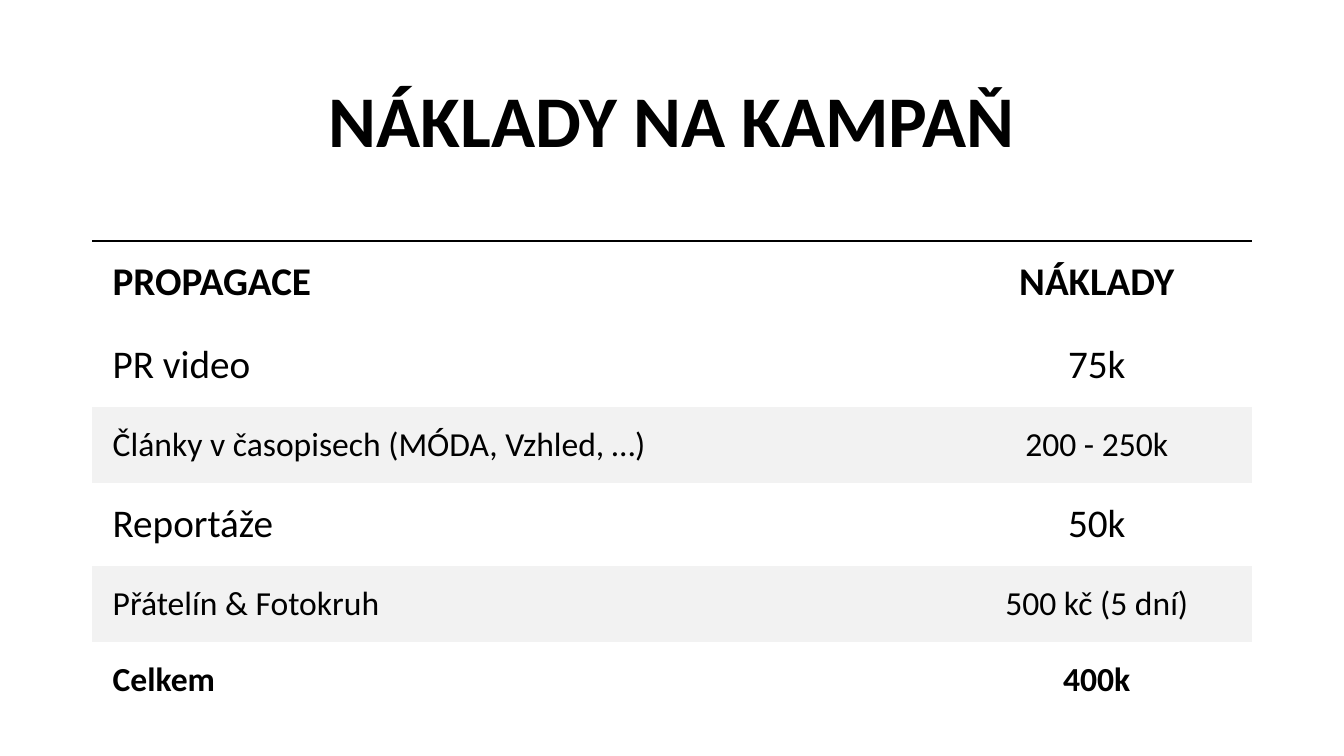
from dataclasses import dataclass

from lxml.etree import SubElement
from pptx import Presentation
from pptx.dml.color import RGBColor
from pptx.enum.text import MSO_ANCHOR as Anchor, PP_ALIGN as Align
from pptx.oxml import parse_xml
from pptx.oxml.ns import nsdecls, qn
from pptx.util import Cm, Pt

TITLE = "NÁKLADY NA KAMPAŇ"
# label, cost, large type, bold, shaded
ROWS = [
    ("PROPAGACE", "NÁKLADY", True, True, False),
    ("PR video", "75k", True, False, False),
    ("Články v časopisech (MÓDA, Vzhled, …)", "200 - 250k", False, False, True),
    ("Reportáže", "50k", True, False, False),
    ("Přátelín & Fotokruh", "500 kč (5 dní)", False, False, True),
    ("Celkem", "400k", False, True, False),
]
COLUMN_WIDTHS = (21.41, 7.8)
LARGE_ROW, SMALL_ROW = 2.09, 1.92
LEFT, TABLE_TOP = 2.33, 6.07
PLAIN_TABLE_STYLE = "{2D5ABB26-0587-4C30-8999-92F81FD0307C}"


@dataclass(frozen=True)
class Theme:
    font: str = "Calibri"
    ink: str = "000000"
    band: str = "F2F2F2"
    title: float = 52
    large: float = 28
    small: float = 24
    rule: float = 2.25


THEME = Theme()


def format_text(para, size, bold, align):
    para.alignment = align
    for span in para.runs:
        span.font.name = THEME.font
        span.font.size = Pt(size)
        span.font.bold = bold
        span.font.color.rgb = RGBColor.from_string(THEME.ink)


def add_title(page):
    box = page.shapes.title
    box.left, box.top, box.width, box.height = Cm(LEFT), Cm(1.55), Cm(sum(COLUMN_WIDTHS)), Cm(3.15)
    frame = box.text_frame
    frame.text = TITLE
    frame.vertical_anchor = Anchor.MIDDLE
    para = frame.paragraphs[0]
    para.line_spacing = 0.9
    format_text(para, THEME.title, True, Align.CENTER)


def add_top_rule(cell):
    rule = parse_xml(
        f'<a:lnT {nsdecls("a")} w="{Pt(THEME.rule)}"><a:solidFill>'
        f'<a:srgbClr val="{THEME.ink}"/></a:solidFill></a:lnT>'
    )
    cell._tc.get_or_add_tcPr().insert(0, rule)


def fill_cell(cell, text, size, bold, shaded, align):
    cell.text = text
    cell.vertical_anchor = Anchor.MIDDLE
    cell.margin_left = cell.margin_right = Cm(0.51)
    cell.margin_top = cell.margin_bottom = Cm(0.36)
    if shaded:
        cell.fill.solid()
        cell.fill.fore_color.rgb = RGBColor.from_string(THEME.band)
    else:
        cell.fill.background()
    format_text(cell.text_frame.paragraphs[0], size, bold, align)


def add_cost_table(page):
    heights = [LARGE_ROW if large else SMALL_ROW for _, _, large, _, _ in ROWS]
    frame = page.shapes.add_table(
        len(ROWS), len(COLUMN_WIDTHS), Cm(LEFT), Cm(TABLE_TOP),
        Cm(sum(COLUMN_WIDTHS)), Cm(sum(heights)),
    )
    table = frame.table
    table.first_row = table.horz_banding = False
    properties = table._tbl.tblPr
    for style in properties.findall(qn("a:tableStyleId")):
        properties.remove(style)
    SubElement(properties, qn("a:tableStyleId")).text = PLAIN_TABLE_STYLE

    for column, width in zip(table.columns, COLUMN_WIDTHS):
        column.width = Cm(width)
    for row, height, (label, cost, large, bold, shaded) in zip(table.rows, heights, ROWS):
        row.height = Cm(height)
        size = THEME.large if large else THEME.small
        for cell, text, align in zip(row.cells, (label, cost), (Align.LEFT, Align.CENTER)):
            fill_cell(cell, text, size, bold, shaded, align)
    for cell in table.rows[0].cells:
        add_top_rule(cell)


def main():
    deck = Presentation()
    deck.slide_width, deck.slide_height = Cm(33.87), Cm(19.05)
    page = deck.slides.add_slide(deck.slide_layouts[5])
    add_title(page)
    add_cost_table(page)
    deck.save("out.pptx")


if __name__ == "__main__":
    main()
